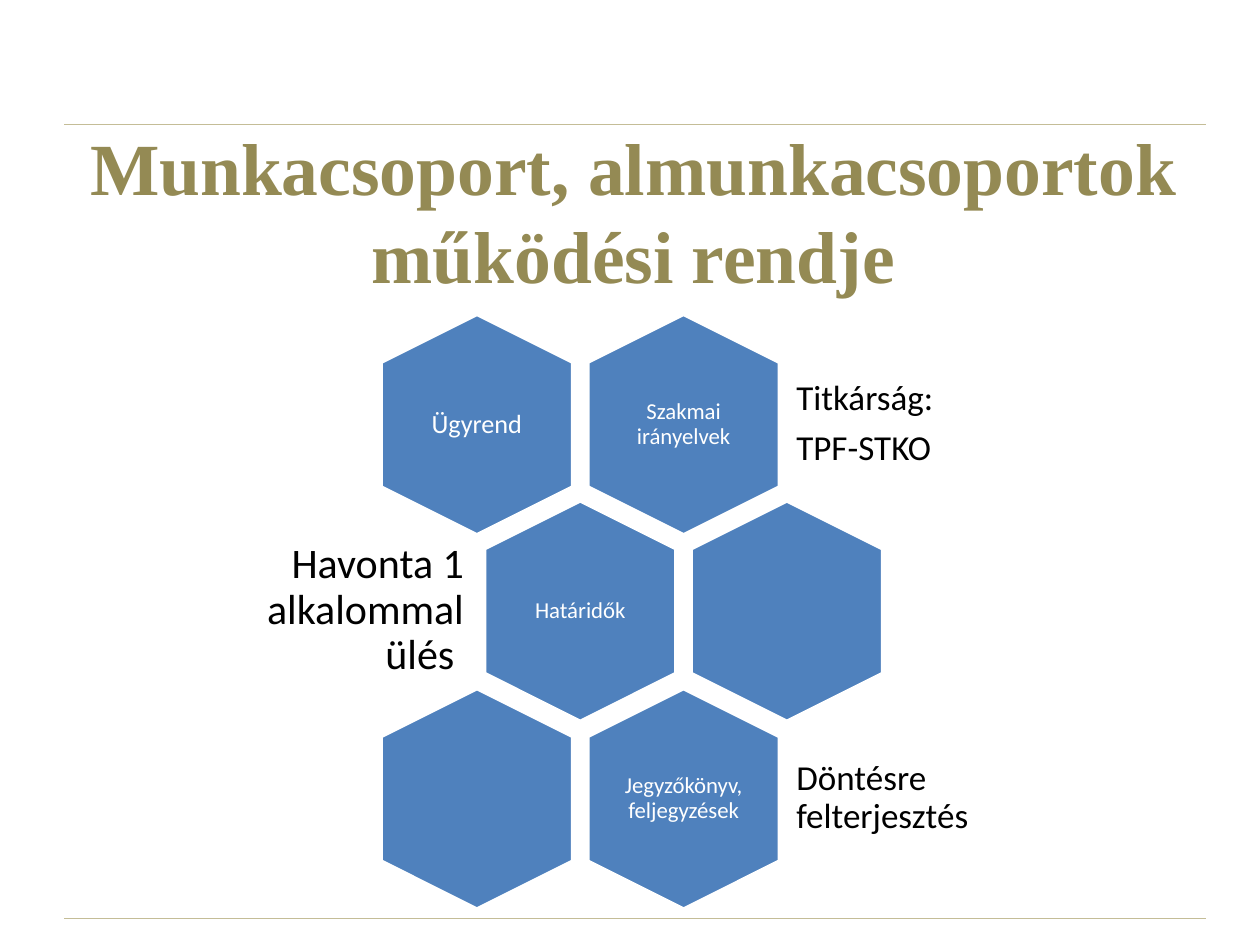
from dataclasses import dataclass

from pptx import Presentation
from pptx.dml.color import RGBColor
from pptx.enum.shapes import MSO_CONNECTOR, MSO_SHAPE
from pptx.enum.text import MSO_ANCHOR, MSO_AUTO_SIZE, PP_ALIGN
from pptx.oxml.ns import qn
from pptx.util import Emu, Pt

PX = 9144  # 100 px to the inch


@dataclass(frozen=True)
class Theme:
    title: RGBColor = RGBColor(0x94, 0x8A, 0x54)
    rule: RGBColor = RGBColor(0xC4, 0xBD, 0x97)
    hexagon: RGBColor = RGBColor(0x4F, 0x81, 0xBD)
    white: RGBColor = RGBColor(0xFF, 0xFF, 0xFF)
    black: RGBColor = RGBColor(0, 0, 0)
    title_font: str = "Times New Roman"
    body_font: str = "Calibri"
    title_size: int = 42
    small: int = 13
    medium: int = 15
    large: int = 20
    huge: int = 24


@dataclass(frozen=True)
class Label:
    lines: tuple[str, ...]
    size: int
    inset: int
    align: PP_ALIGN = PP_ALIGN.CENTER


@dataclass(frozen=True)
class Cell:
    row: int
    col: int
    label: Label | None = None
    side: Label | None = None


THEME = Theme()
HEX_W, HEX_H = 175, 152
COL_PITCH = 164
CELLS = (
    Cell(0, 1, Label(("Szakmai irányelvek",), THEME.small, 5),
         Label(("Titkárság:", "TPF-STKO"), THEME.large, 8, PP_ALIGN.LEFT)),
    Cell(0, 0, Label(("Ügyrend",), THEME.medium, 0)),
    Cell(1, 0, Label(("Határidők",), THEME.small, 5),
         Label(("Havonta 1 alkalommal ülés ",), THEME.huge, 10, PP_ALIGN.RIGHT)),
    Cell(1, 1),
    Cell(2, 1, Label(("Jegyzőkönyv, feljegyzések",), THEME.small, 5),
         Label(("Döntésre felterjesztés",), THEME.large, 8, PP_ALIGN.LEFT)),
    Cell(2, 0),
)


def px(*values: int) -> list[Emu]:
    return [Emu(v * PX) for v in values]


def add_rule(slide, y: int) -> None:
    line = slide.shapes.add_connector(MSO_CONNECTOR.STRAIGHT, *px(51, y, 957, y))
    line.line.color.rgb = THEME.rule
    line.line.width = Pt(0.75)
    sp_pr = line._element.spPr
    sp_pr.append(sp_pr.makeelement(qn("a:effectLst"), {}))


def add_title(slide, text: str) -> None:
    title = slide.shapes.title
    title.left, title.top, title.width, title.height = px(4, 131, 997, 71)
    tf = title.text_frame
    tf.text = text
    tf.word_wrap = True
    tf.auto_size = MSO_AUTO_SIZE.NONE
    tf.vertical_anchor = MSO_ANCHOR.MIDDLE
    p = tf.paragraphs[0]
    p.alignment = PP_ALIGN.CENTER
    p.font.name, p.font.size, p.font.bold = THEME.title_font, Pt(THEME.title_size), True
    p.font.color.rgb = THEME.title


def add_label(slide, label: Label, box: tuple[int, int, int, int], color: RGBColor) -> None:
    tf = slide.shapes.add_textbox(*px(*box)).text_frame
    tf.word_wrap = True
    tf.vertical_anchor = MSO_ANCHOR.MIDDLE
    inset = Emu(label.inset * PX)
    tf.margin_left = tf.margin_top = tf.margin_right = tf.margin_bottom = inset
    for i, text in enumerate(label.lines):
        p = tf.add_paragraph() if i else tf.paragraphs[0]
        p.text = text
        p.alignment = label.align
        p.line_spacing = 0.9
        p.space_after = Pt(0.35 * label.size)
        p.font.name, p.font.size = THEME.body_font, Pt(label.size)
        p.font.color.rgb = color


def add_cell(slide, cell: Cell) -> None:
    """Draw a hexagon of the honeycomb, where odd rows shift by half a column."""
    x = 291 + cell.col * COL_PITCH + cell.row % 2 * COL_PITCH // 2
    y = 261 + cell.row * 297 // 2
    sp = slide.shapes.add_shape(MSO_SHAPE.HEXAGON, *px(x, y, HEX_W, HEX_H))
    sp.rotation = 90
    sp.adjustments[0] = 0.25
    sp.shadow.inherit = False
    sp.fill.solid()
    sp.fill.fore_color.rgb = THEME.hexagon
    sp.line.color.rgb = THEME.white
    sp.line.width = Pt(2)
    if cell.label:
        add_label(slide, cell.label, (x + 35, y + 16, 105, 120), THEME.white)
    if cell.side:
        on_left = cell.side.align == PP_ALIGN.RIGHT
        left, width = (x - 184, 189) if on_left else (x + 169, 195)
        add_label(slide, cell.side, (left, y + 23, width, 105), THEME.black)


def main() -> None:
    prs = Presentation()
    prs.slide_width, prs.slide_height = px(1000, 750)
    slide = prs.slides.add_slide(prs.slide_layouts[5])
    for y in (729, 99):
        add_rule(slide, y)
    add_title(slide, "Munkacsoport, almunkacsoportok működési rendje")
    for cell in CELLS:
        add_cell(slide, cell)
    prs.save("out.pptx")


if __name__ == "__main__":
    main()
